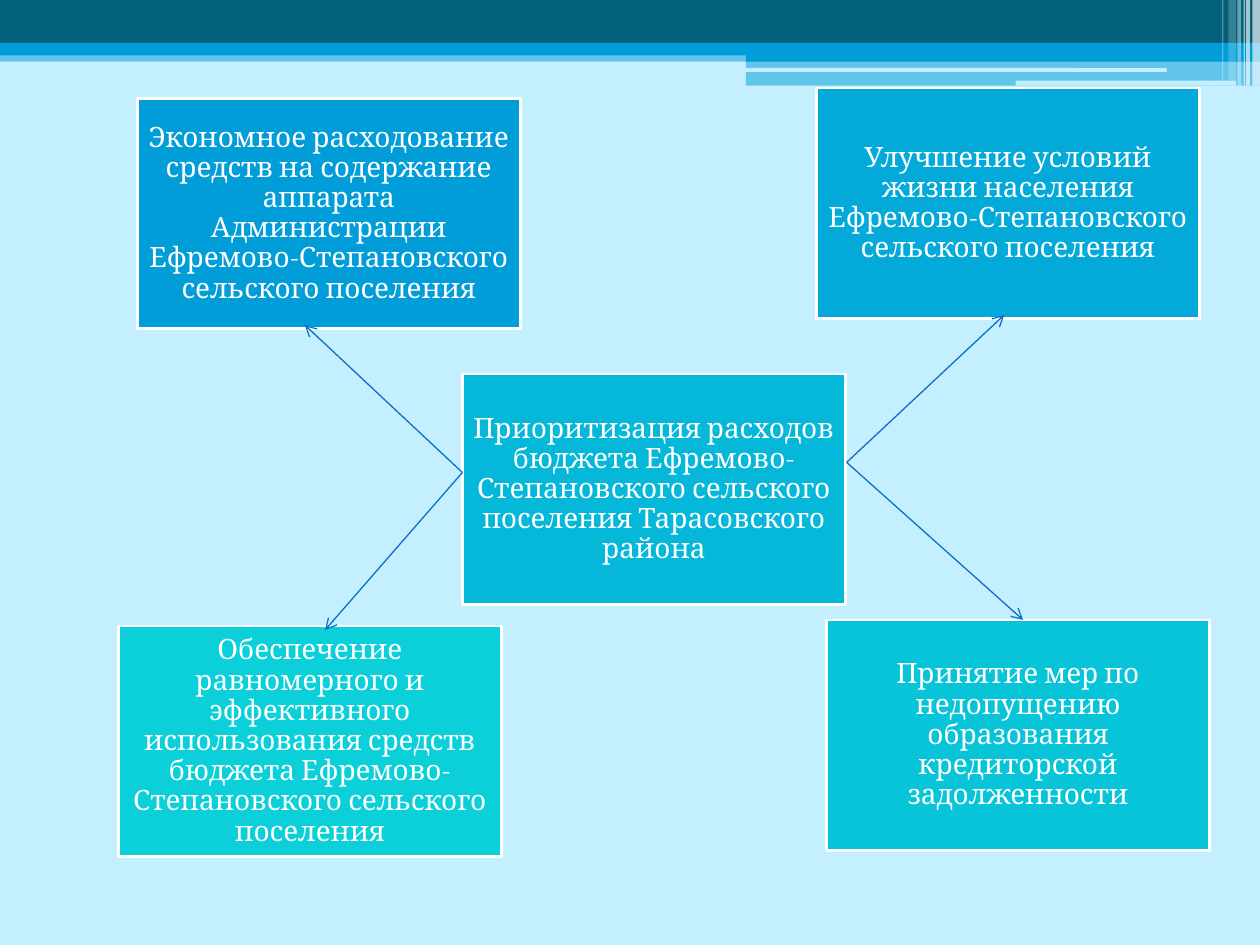
"""Build a slide on the spending priorities of a rural settlement budget."""
from lxml.etree import SubElement
from pptx import Presentation
from pptx.dml.color import RGBColor as RGB
from pptx.enum.shapes import MSO_CONNECTOR as LINK, MSO_SHAPE as SHAPE
from pptx.enum.text import MSO_ANCHOR as ANCHOR, PP_ALIGN as ALIGN
from pptx.oxml.ns import qn
from pptx.util import Inches, Pt

PALE = RGB(0xC4, 0xEF, 0xFF)
DARK = RGB(0x04, 0x61, 0x7B)
BLUE = RGB(0x00, 0x9D, 0xD9)
WHITE = RGB(0xFF, 0xFF, 0xFF)
INK = RGB(0x0F, 0x6F, 0xC6)
FONT = "Cambria"
WIDE, HIGH = 3.04, 1.83

BANDS = [
    (0, 0.4, 10, 0.09, BLUE, 50),
    (0, 0, 10, 0.34, DARK, 100),
    (0, 0.34, 10, 0.1, BLUE, 100),
    (5.92, 0.39, 4.08, 0.1, BLUE, 100),
    (5.92, 0.48, 4.08, 0.2, BLUE, 50),
]
PILLS = [(5.91, 0.54, 3.35, 0.03), (8.06, 0.64, 1.75, 0.04)]
STRIPES = [
    (9.94, 0.06, 0.68, 65),
    (9.89, 0.03, 0.68, 65),
    (9.87, 0.01, 0.68, 60),
    (9.82, 0.03, 0.68, 40),
    (9.75, 0.06, 0.64, 20),
    (9.7, 0.01, 0.64, 30),
]
CARDS = [
    (1.09, 0.78, BLUE,
     "Экономное расходование средств на содержание аппарата Администрации "
     "Ефремово-Степановского сельского поселения"),
    (6.48, 0.7, RGB(0x03, 0xAA, 0xD9),
     "Улучшение условий жизни населения Ефремово-Степановского "
     "сельского поселения"),
    (3.67, 2.97, RGB(0x05, 0xB7, 0xD9),
     "Приоритизация расходов бюджета Ефремово-Степановского сельского "
     "поселения Тарасовского района"),
    (6.56, 4.92, RGB(0x08, 0xC4, 0xD9),
     "Принятие мер по недопущению образования кредиторской задолженности"),
    (0.94, 4.97, RGB(0x0B, 0xD0, 0xD9),
     "Обеспечение равномерного и эффективного использования средств бюджета "
     "Ефремово-Степановского сельского поселения"),
]
LEFT, RIGHT = (3.67, 3.75), (6.72, 3.67)
ARROWS = [
    (LEFT, (2.58, 5)),
    (LEFT, (2.42, 2.58)),
    (RIGHT, (7.97, 2.5)),
    (RIGHT, (8.12, 4.92)),
]


def add_block(slide, box, color, alpha=100, kind=SHAPE.RECTANGLE):
    shape = slide.shapes.add_shape(kind, *map(Inches, box))
    shape.shadow.inherit = False
    shape.fill.solid()
    shape.fill.fore_color.rgb = color
    shape.line.fill.background()
    if alpha < 100:
        tint = shape.fill._xPr.find(qn("a:solidFill"))[0]
        SubElement(tint, qn("a:alpha"), val=str(alpha * 1000))
    return shape


def add_card(slide, left, top, color, text):
    card = add_block(slide, (left, top, WIDE, HIGH), color)
    card.line.color.rgb = WHITE
    card.line.width = Pt(1.5)
    frame = card.text_frame
    frame.word_wrap = True
    frame.vertical_anchor = ANCHOR.MIDDLE
    frame.margin_left = frame.margin_right = Inches(0.07)
    frame.margin_top = frame.margin_bottom = Inches(0.07)
    frame.text = text
    para = frame.paragraphs[0]
    para.alignment = ALIGN.CENTER
    para.line_spacing = 0.9
    para.font.name = FONT
    para.font.size = Pt(16)
    para.font.color.rgb = WHITE


def add_arrow(slide, start, end):
    arrow = slide.shapes.add_connector(LINK.STRAIGHT, *map(Inches, start + end))
    arrow.line.color.rgb = INK
    arrow.line.width = Pt(0.75)
    SubElement(arrow.line._get_or_add_ln(), qn("a:tailEnd"), type="arrow")
    SubElement(arrow._element.spPr, qn("a:effectLst"))


def main():
    deck = Presentation()
    deck.slide_width, deck.slide_height = Inches(10), Inches(7.5)
    slide = deck.slides.add_slide(deck.slide_layouts[6])
    slide.background.fill.solid()
    slide.background.fill.fore_color.rgb = PALE
    for *box, color, alpha in BANDS:
        add_block(slide, box, color, alpha)
    for box in PILLS:
        add_block(slide, box, PALE, kind=SHAPE.ROUNDED_RECTANGLE)
    for left, width, height, alpha in STRIPES:
        add_block(slide, (left, 0, width, height), WHITE, alpha)
    for card in CARDS:
        add_card(slide, *card)
    for start, end in ARROWS:
        add_arrow(slide, start, end)
    deck.save("out.pptx")


if __name__ == "__main__":
    main()
